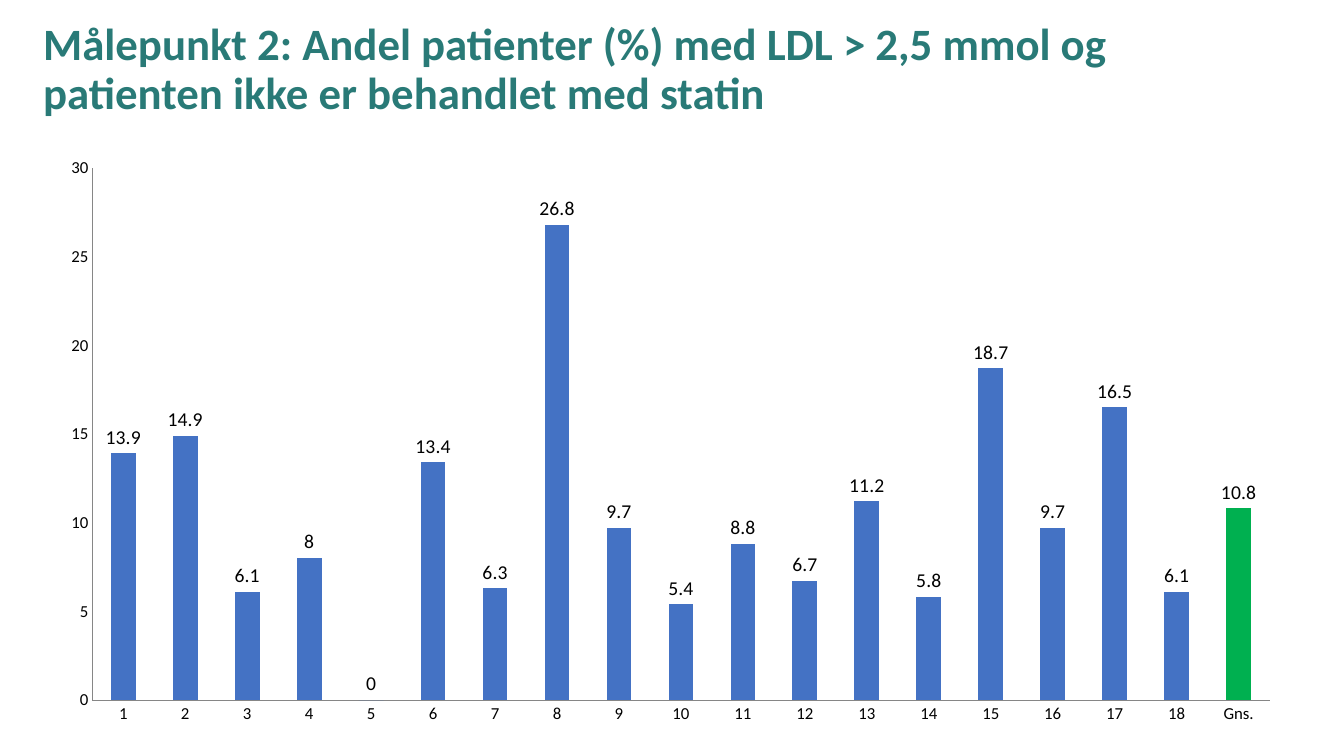
import pptx
import pptx.util
import pptx.chart.data
import pptx.dml.color
import pptx.enum.chart
import pptx.enum.text

Inches, Pt = pptx.util.Inches, pptx.util.Pt
COLORS = {"title": "297A77", "bar": "4472C4", "average": "00B050",
          "text": "000000", "axis": "868686"}
FONT = "Calibri"


def rgb(name):
    return pptx.dml.color.RGBColor.from_string(COLORS[name])


def add_text(s, text, left, top, width, height, size, color, bold=False,
             anchor=pptx.enum.text.MSO_ANCHOR.MIDDLE, spacing=0.9):
    tf = s.shapes.add_textbox(Inches(left), Inches(top), Inches(width), Inches(height)).text_frame
    tf.word_wrap = True
    tf.vertical_anchor = anchor
    p = tf.paragraphs[0]
    p.line_spacing = spacing
    r = p.add_run()
    r.text = text
    r.font.name, r.font.size, r.font.bold = FONT, Pt(size), bold
    r.font.color.rgb = rgb(color)


prs = pptx.Presentation()
prs.slide_width, prs.slide_height = Inches(13.33), Inches(7.5)
s = prs.slides.add_slide(prs.slide_layouts[6])

add_text(s, "Målepunkt 2: Andel patienter (%) med LDL > 2,5 mmol og "
            "patienten ikke er behandlet med statin",
         0.33, 0.07, 12.09, 1.26, size=32, color="title", bold=True)

values = [13.9, 14.9, 6.1, 8, 0, 13.4, 6.3, 26.8, 9.7, 5.4,
          8.8, 6.7, 11.2, 5.8, 18.7, 9.7, 16.5, 6.1, 10.8]
data = pptx.chart.data.CategoryChartData()
data.categories = [str(n) for n in range(1, len(values))] + ["Gns."]
data.add_series("Series 1", values)
chart = s.shapes.add_chart(pptx.enum.chart.XL_CHART_TYPE.COLUMN_CLUSTERED,
                           Inches(0.46), Inches(1.45), Inches(12.38), Inches(5.85), data).chart
chart.has_legend = False
chart.has_title = False
chart.font.name, chart.font.size = FONT, Pt(10)
chart.font.color.rgb = rgb("text")

for axis in (chart.category_axis, chart.value_axis):
    axis.has_major_gridlines = False
    axis.major_tick_mark = pptx.enum.chart.XL_TICK_MARK.NONE
    axis.minor_tick_mark = pptx.enum.chart.XL_TICK_MARK.NONE
    axis.tick_labels.font.size = Pt(12)
    axis.format.line.color.rgb = rgb("axis")
    axis.format.line.width = Pt(0.75)
chart.value_axis.minimum_scale = 0
chart.value_axis.maximum_scale = 30
chart.value_axis.major_unit = 5

plot = chart.plots[0]
plot.gap_width = 150
plot.vary_by_categories = False
series = plot.series[0]
series.invert_if_negative = False
average = series.points[len(values) - 1]
for bars, color in ((series, "bar"), (average, "average")):
    bars.format.fill.solid()
    bars.format.fill.fore_color.rgb = rgb(color)

labels = series.data_labels
labels.show_value = True
labels.position = pptx.enum.chart.XL_LABEL_POSITION.OUTSIDE_END
labels.font.size = Pt(14)

prs.save("out.pptx")
